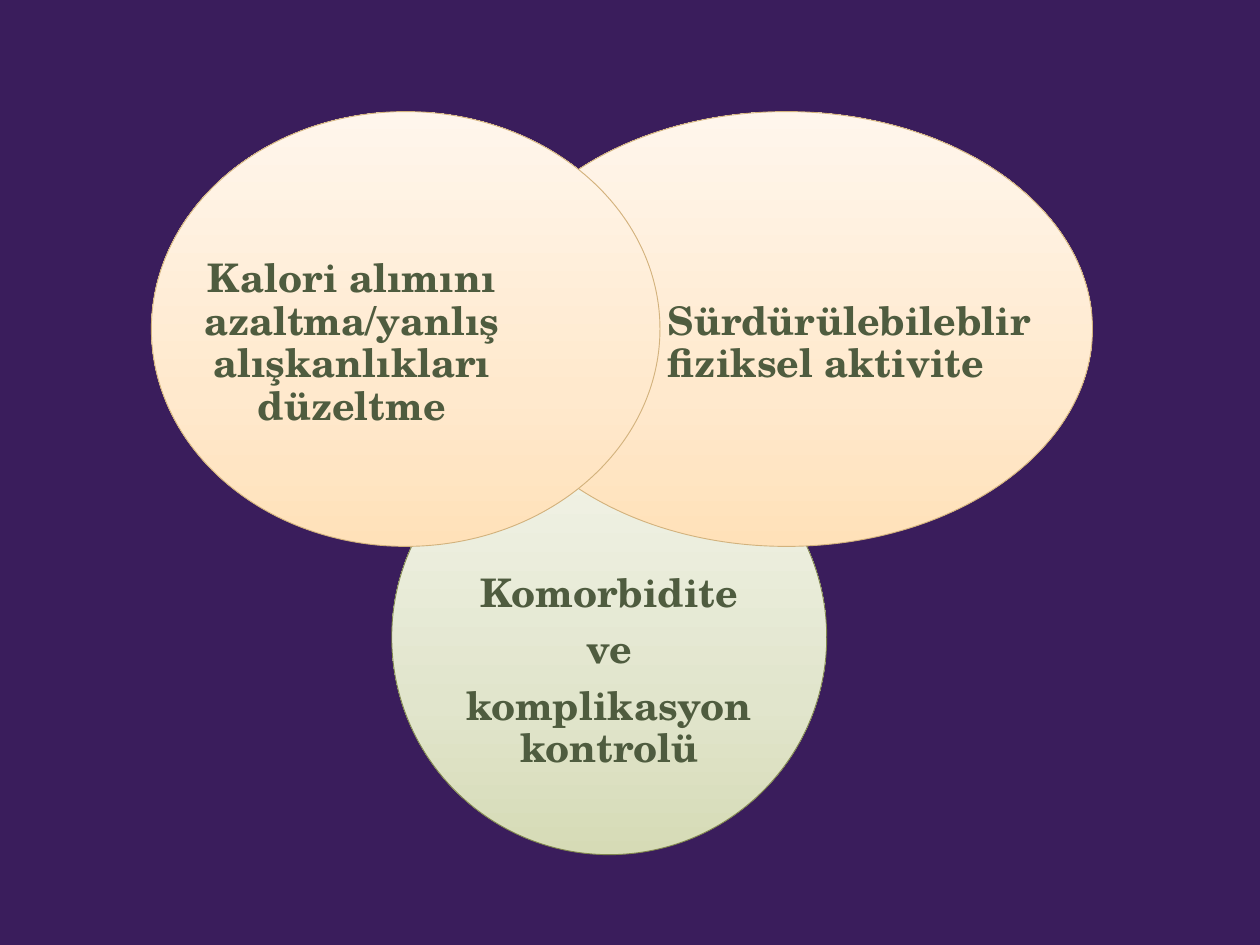
import copy

import pptx
import pptx.dml.color
import pptx.enum.shapes
import pptx.enum.text
import pptx.oxml.ns
import pptx.util

Cm = pptx.util.Cm
Pt = pptx.util.Pt
ALIGN = pptx.enum.text.PP_ALIGN


def color(code):
    return pptx.dml.color.RGBColor.from_string(code)


def write(slide, text, left, top, width, height, align=ALIGN.CENTER,
          size=32, ink="4F5C3F", face="TeX Gyre Schola"):
    frame = slide.shapes.add_textbox(Cm(left), Cm(top), Cm(width), Cm(height)).text_frame
    frame.word_wrap = True
    frame.vertical_anchor = pptx.enum.text.MSO_ANCHOR.MIDDLE
    frame.margin_left = frame.margin_right = frame.margin_top = frame.margin_bottom = 0
    frame.text = text
    for para in frame.paragraphs:
        para.alignment = align
        para.line_spacing = 0.9
        para.space_after = Pt(11.2)
        para.font.size = Pt(size)
        para.font.name = face
        para.font.bold = True
        para.font.color.rgb = color(ink)


deck = pptx.Presentation()
deck.slide_width, deck.slide_height = Cm(36.12), Cm(27.1)
slide = deck.slides.add_slide(deck.slide_layouts[6])
slide.background.fill.solid()
slide.background.fill.fore_color.rgb = color("3A1D5C")

# Color sets: gradient from bottom to top, then outline
green = ("D6DBB6", "E1E5CC", "F4F5EB"), "80864F"
peach = ("FFE1B9", "FFE9CD", "FFF6EC"), "D2B27D"

# Circles from back to front: colors, oval box, text, text box, alignment
parts = [
    (green, (11.23, 12.04, 12.47, 12.47), "Komorbidite\nve\nkomplikasyon kontrolü",
     (12.9, 16.48, 9.14, 5.61), ALIGN.CENTER),
    (peach, (13.77, 3.2, 17.55, 12.47), "Sürdürülebileblir fiziksel aktivite",
     (19.15, 6.43, 10.54, 6.86), ALIGN.LEFT),
    (peach, (4.34, 3.2, 14.58, 12.47),
     "Kalori alımını azaltma/yanlış alışkanlıkları düzeltme",
     (5.72, 6.43, 8.74, 6.86), ALIGN.CENTER),
]

for (shades, edge), oval, text, box, align in parts:
    shape = slide.shapes.add_shape(pptx.enum.shapes.MSO_SHAPE.OVAL, *map(Cm, oval))
    shape.shadow.inherit = False
    shape.line.color.rgb = color(edge)
    shape.line.width = Pt(0.75)

    # Three-stop gradient
    shape.fill.gradient()
    shape.fill.gradient_angle = 90
    stops = shape._element.spPr.find(".//" + pptx.oxml.ns.qn("a:gsLst"))
    stops.append(copy.deepcopy(stops[-1]))
    for stop, shade, place in zip(shape.fill.gradient_stops, shades, (0, 0.35, 1)):
        stop.color.rgb = color(shade)
        stop.position = place

    write(slide, text, *box, align=align)

deck.save("out.pptx")
